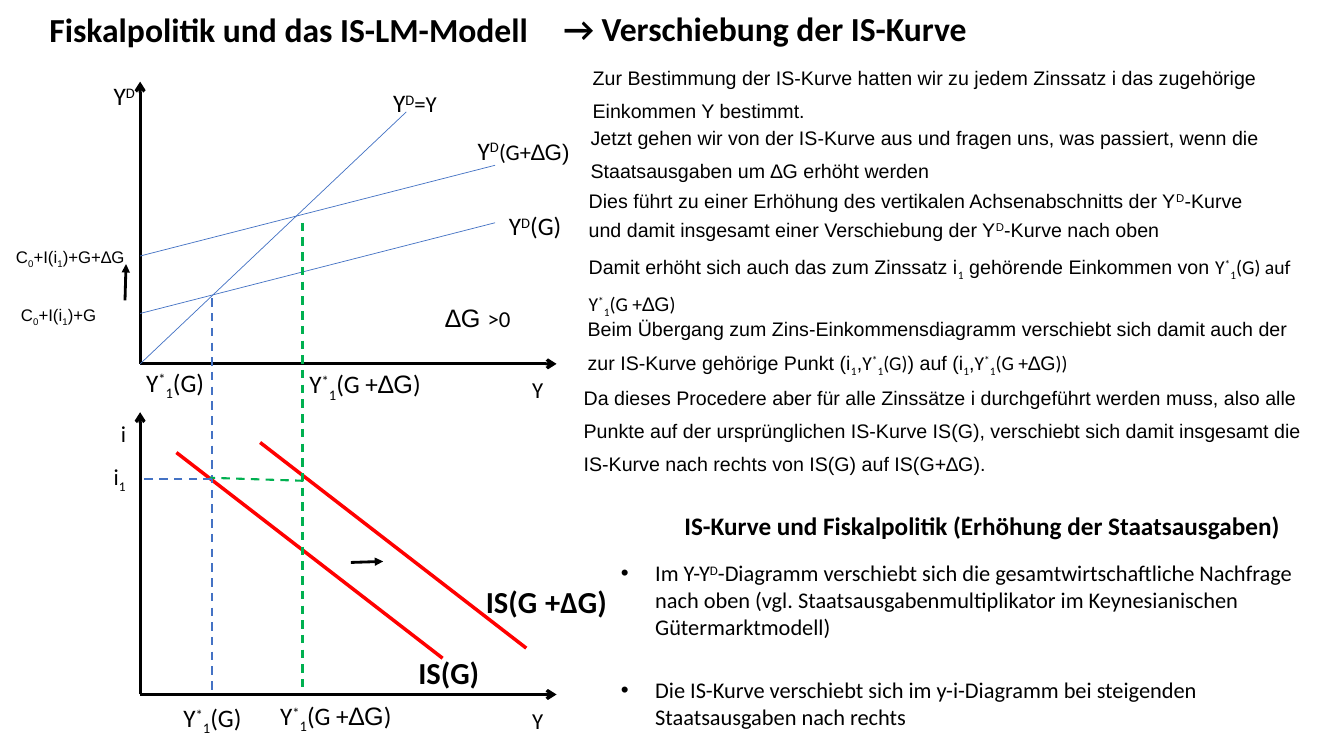
from dataclasses import dataclass
from typing import Optional

from pptx import Presentation as Deck
from pptx.dml.color import RGBColor as RGB
from pptx.enum.dml import MSO_LINE as Dash
from pptx.enum.shapes import MSO_CONNECTOR as Link
from pptx.enum.text import MSO_ANCHOR as Anchor, MSO_AUTO_SIZE as Fit
from pptx.oxml.ns import qn
from pptx.util import Inches, Pt
from lxml.etree import SubElement as Sub


@dataclass(frozen=True)
class Theme:
    black: str = "000000"
    blue: str = "4472C4"
    green: str = "00B050"
    red: str = "FF0000"
    sans: str = "Calibri"
    plain: str = "Arial"
    title: float = 24
    curve: float = 21.8
    label: float = 18
    axis: float = 16.3
    point: float = 16
    body: float = 14
    note: float = 12


T = Theme()


@dataclass
class Line:
    start: tuple[float, float]
    end: tuple[float, float]
    color: str
    width: float
    head: Optional[str] = None
    dash: bool = False


@dataclass
class Label:
    left: float
    top: float
    wide: float
    text: str
    size: float = T.label
    face: str = T.sans
    bold: bool = False
    alt: float = T.axis
    high: float = 0.4


@dataclass
class Note:
    left: float
    top: float
    high: float
    text: str
    wide: float = 7.44
    size: float = T.body


deck = Deck()
deck.slide_width, deck.slide_height = Inches(13.33), Inches(7.5)
slide = deck.slides.add_slide(deck.slide_layouts[6])


# Markup: ^x raises, _x lowers, ~ swaps the font, {...} takes the second size
def write(para, text: str, *, size: float, face: str = T.sans,
          bold: bool = False, alt: float = T.axis) -> None:
    runs: list[tuple[str, int, bool, bool]] = []
    shift, swap, other = 0, False, False
    for char in text:
        if char in "^_":
            shift = 30 if char == "^" else -25
        elif char == "~":
            swap = not swap
        elif char in "{}":
            other = char == "{"
        else:
            style = (shift, swap, other)
            if runs and runs[-1][1:] == style:
                runs[-1] = (runs[-1][0] + char, *style)
            else:
                runs.append((char, *style))
            shift = 0
    pair = {T.sans: T.plain, T.plain: T.sans}
    for part, base, swapped, second in runs:
        run = para.add_run()
        run.text = part
        font = run.font
        font.name = pair[face] if swapped else face
        font.size = Pt(alt if second else size)
        font.bold = bold and not (second and alt > size)
        font.color.rgb = RGB.from_string(T.black)
        if base:
            run._r.get_or_add_rPr().set("baseline", f"{base}000")


def frame(left: float, top: float, wide: float, high: float, wrap: bool = True):
    box = slide.shapes.add_textbox(*map(Inches, (left, top, wide, high)))
    box.text_frame.word_wrap = wrap
    box.text_frame.auto_size = Fit.NONE if wrap else Fit.SHAPE_TO_FIT_TEXT
    return box.text_frame


def draw(line: Line) -> None:
    ends = map(Inches, (*line.start, *line.end))
    link = slide.shapes.add_connector(Link.STRAIGHT, *ends)
    link.line.color.rgb = RGB.from_string(line.color)
    link.line.width = Pt(line.width)
    if line.dash:
        link.line.dash_style = Dash.DASH
    if line.head:
        Sub(link.line._get_or_add_ln(), qn("a:tailEnd")).set("type", line.head)
    Sub(link._element.spPr, qn("a:effectLst"))


def tag(item: Label) -> None:
    text = frame(item.left, item.top, item.wide, item.high, wrap=False)
    write(text.paragraphs[0], item.text, size=item.size, face=item.face,
          bold=item.bold, alt=item.alt)


def tell(item: Note) -> None:
    para = frame(item.left, item.top, item.wide, item.high).paragraphs[0]
    para.line_spacing = 1.4
    para.space_before = Pt(0.2 * item.size)
    write(para, item.text, size=item.size, face=T.plain)


# Titles
for left, top, wide, text in (
    (0.4, 0, 5.01, "Fiskalpolitik und das IS-LM-Modell"),
    (5.5, -0.01, 5.43, "→ Verschiebung der IS-Kurve"),
):
    head = frame(left, top, wide, 0.58)
    head.vertical_anchor = Anchor.MIDDLE
    head.margin_left = head.margin_right = Inches(0.09)
    head.margin_top = head.margin_bottom = Inches(0.04)
    write(head.paragraphs[0], text, size=T.title, bold=True)

# Axes of both diagrams
zero, top_floor, low_floor = 1.39, 3.61, 6.89
lines: list[Line] = []
for floor in (top_floor, low_floor):
    for end in ((zero, floor - 2.8), (5.52, floor)):
        lines.append(Line((zero, floor), end, T.black, 2.25, "arrow"))

# Demand curves and the 45-degree line
lines.append(Line((zero, top_floor), (4.03, 1.11), T.blue, 0.5))
for start in (3.11, 2.54):
    lines.append(Line((zero, start), (4.91, start - 0.9), T.blue, 0.5))

# IS curves
for left, top in ((1.75, 4.49), (2.58, 4.39)):
    lines.append(Line((left, top), (left + 2.64, top + 2.04), T.red, 2.5))

# Dashed guides and shift arrows
lines += [
    Line((3, 2.21), (3, 6.82), T.green, 1.5, dash=True),
    Line((2.1, 2.96), (2.1, 6.86), T.blue, 1.5, dash=True),
    Line((3.01, 4.77), (2.08, 4.74), T.green, 1.5, dash=True),
    Line((2.1, 4.75), (zero, 4.75), T.blue, 1.5, dash=True),
    Line((3.48, 5.58), (3.8, 5.57), T.black, 2, "triangle"),
    Line((1.24, 2.98), (1.25, 2.62), T.black, 2, "triangle"),
]
for line in lines:
    draw(line)

# Diagram labels
OLD, NEW = "Y^*_1(G)", "Y^*_1(G +~∆G~)"
for item in (
    Label(4.95, 2.04, 0.74, "Y^D(G)"),
    Label(4.64, 1.29, 1.14, "Y^D{(G+~∆G)}", alt=T.point),
    Label(1.03, 0.75, 0.43, "Y^D"),
    Label(3.8, 0.82, 0.65, "Y^D{=Y}"),
    Label(4.32, 2.95, 0.85, "∆G ~{>0}", face=T.plain),
    Label(5.18, 3.68, 0.31, "Y", T.axis, high=0.38),
    Label(5.18, 6.96, 0.31, "Y", T.axis, high=0.38),
    Label(1.1, 4.11, 0.25, "i", T.axis, high=0.38),
    Label(1.03, 4.54, 0.33, "i_1", T.axis, high=0.38),
    Label(1.35, 3.59, 0.81, OLD),
    Label(1.72, 6.92, 0.81, OLD),
    Label(2.97, 3.61, 1.34, NEW),
    Label(2.68, 6.9, 1.34, NEW),
    Label(4.05, 6.44, 0.81, "IS(G)", T.curve, bold=True, high=0.47),
    Label(4.72, 5.7, 1.41, "IS(G{ }+∆G)", T.curve, bold=True,
          alt=T.title, high=0.5),
    Label(6.69, 5.01, 6.16,
          "IS-Kurve und Fiskalpolitik (Erhöhung der Staatsausgaben)", bold=True),
):
    tag(item)

# Intercepts and explanation
for item in (
    Note(0.11, 2.88, 0.42, "C_0+I(i_1)+G", 1.04, T.note),
    Note(0.06, 2.31, 0.42, "C_0+I(i_1)+G+∆G", 1.32, T.note),
    Note(5.78, 0.51, 0.7, "Zur Bestimmung der IS-Kurve hatten wir zu jedem Zinssatz i das zugehörige Einkommen Y bestimmt."),
    Note(5.76, 1.11, 0.7, "Jetzt gehen wir von der IS-Kurve aus und fragen uns, was passiert, wenn die Staatsausgaben um ∆G erhöht werden"),
    Note(5.74, 1.73, 0.42, "Dies führt zu einer Erhöhung des vertikalen Achsenabschnitts der Y^D-Kurve"),
    Note(5.74, 2.02, 0.42, "und damit insgesamt einer Verschiebung der Y^D-Kurve nach oben"),
    Note(5.74, 2.37, 0.74, f"Damit erhöht sich auch das zum Zinssatz i~_1~ gehörende Einkommen von ~{OLD} auf {NEW}"),
    Note(5.73, 3, 0.74, f"Beim Übergang zum Zins-Einkommensdiagramm verschiebt sich damit auch der zur IS-Kurve gehörige Punkt (i~_1~,~{OLD}~) auf (i~_1~,~{NEW})"),
    Note(5.69, 3.69, 1.06, "Da dieses Procedere aber für alle Zinssätze i durchgeführt werden muss, also alle Punkte auf der ursprünglichen IS-Kurve IS(G), verschiebt sich damit insgesamt die IS-Kurve nach rechts von IS(G) auf IS(G+∆G)."),
):
    tell(item)

# Summary bullets
points = frame(6.06, 5.5, 7.27, 1.82)
for rank, text in enumerate((
    "Im Y-Y^D-Diagramm verschiebt sich die gesamtwirtschaftliche Nachfrage nach oben (vgl. Staatsausgabenmultiplikator im Keynesianischen Gütermarktmodell)",
    "Die IS-Kurve verschiebt sich im y-i-Diagramm bei steigenden Staatsausgaben nach rechts",
)):
    para = points.add_paragraph() if rank else points.paragraphs[0]
    para.space_before = Pt(26 * rank)
    props = para._p.get_or_add_pPr()
    props.set("marL", str(Inches(0.34)))
    props.set("indent", str(-Inches(0.34)))
    Sub(props, qn("a:buFont")).set("typeface", T.plain)
    Sub(props, qn("a:buChar")).set("char", "•")
    write(para, text, size=T.point)

deck.save("out.pptx")
